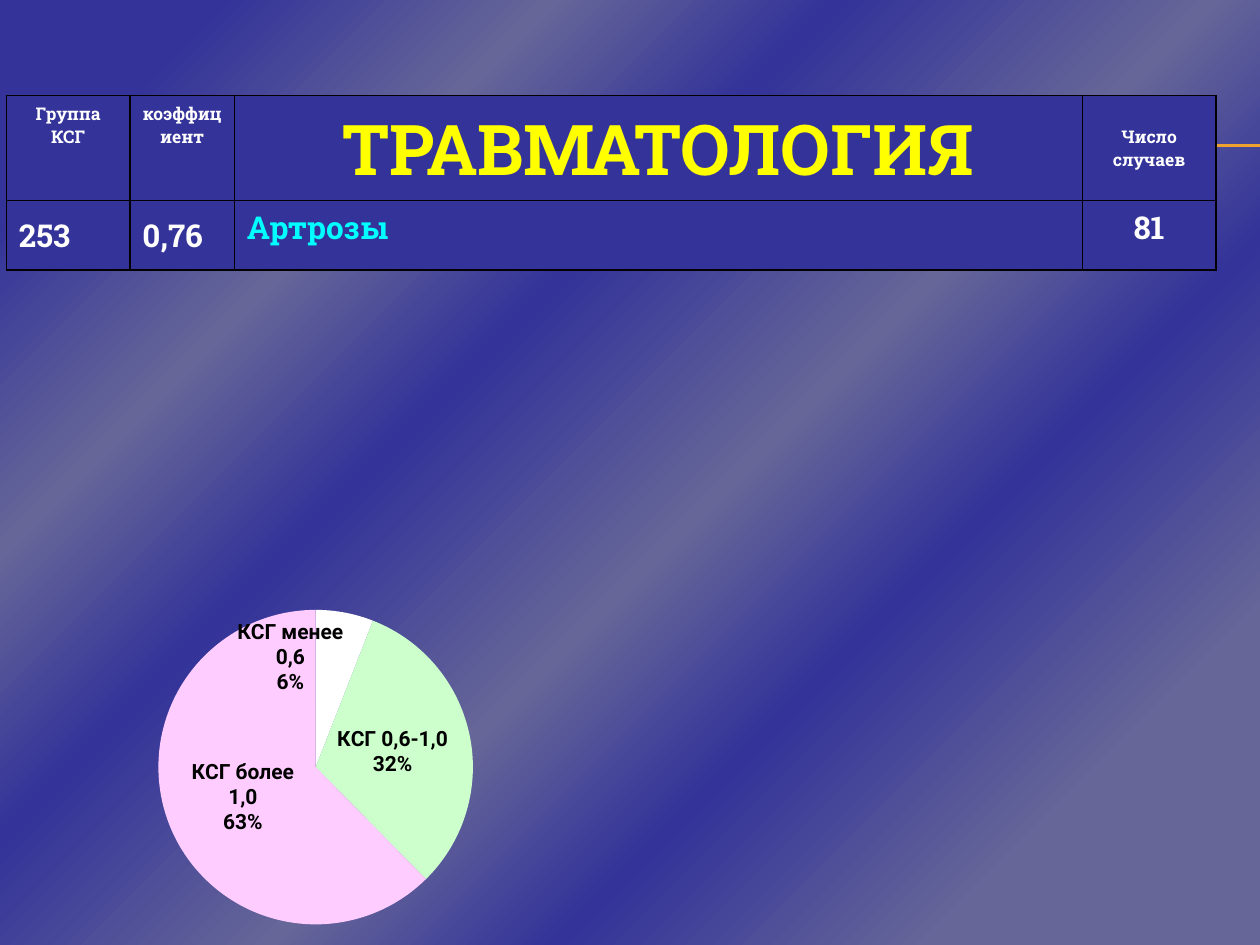
from dataclasses import dataclass

from lxml import etree
from pptx import Presentation
from pptx import util as u
from pptx.chart.data import CategoryChartData
from pptx.dml.color import RGBColor
from pptx.enum import chart as charts, shapes, text
from pptx.oxml import ns


@dataclass(frozen=True)
class Theme:
    navy: str = "333399"
    slate: str = "666699"
    orange: str = "F0A22E"
    white: str = "FFFFFF"
    yellow: str = "FFFF00"
    cyan: str = "00FFFF"
    black: str = "000000"
    mint: str = "CCFFCC"
    pink: str = "FFCCFF"
    table_font: str = "Roboto Slab"
    chart_font: str = "Roboto"
    header_size: int = 10
    title_size: int = 40
    body_size: int = 18
    label_size: int = 12


THEME = Theme()


@dataclass(frozen=True)
class CellText:
    lines: tuple
    size: int
    color: str = THEME.white
    centered: bool = True
    middle: bool = False


def rgb(color):
    return RGBColor.from_string(color)


def add_element(parent, tag, **attributes):
    return etree.SubElement(parent, ns.qn(tag), attributes)


def add_color(parent, color):
    add_element(parent, "a:srgbClr", val=color)


def style_font(font, name, size, color):
    font.name = name
    font.size = u.Pt(size)
    font.bold = True
    font.color.rgb = rgb(color)


def paint_background(page):
    page.background.fill.gradient()
    gradient = page.element.xpath(".//p:bg//a:gradFill")[0]
    for child in list(gradient):
        gradient.remove(child)
    stops = add_element(gradient, "a:gsLst")
    for index, percent in enumerate((10, 25, 38, 55, 68, 85)):
        stop = add_element(stops, "a:gs", pos=str(percent * 1000))
        add_color(stop, THEME.slate if index % 2 else THEME.navy)
    add_element(gradient, "a:lin", ang=str(45 * 60000), scaled="0")


def add_rule(page, top):
    rule = page.shapes.add_connector(
        shapes.MSO_CONNECTOR.STRAIGHT,
        u.Inches(0.56), u.Inches(top), u.Inches(10), u.Inches(top),
    )
    rule.line.color.rgb = rgb(THEME.orange)
    rule.line.width = u.Pt(0.75)
    add_element(rule.element.spPr, "a:effectLst")


def add_borders(cell):
    properties = cell._tc.get_or_add_tcPr()
    for side in ("L", "R", "T", "B"):
        border = add_element(properties, f"a:ln{side}", w=str(u.Pt(1)))
        add_color(add_element(border, "a:solidFill"), THEME.black)


def fill_cell(cell, content):
    add_borders(cell)
    cell.fill.solid()
    cell.fill.fore_color.rgb = rgb(THEME.navy)
    anchors = text.MSO_ANCHOR
    cell.vertical_anchor = anchors.MIDDLE if content.middle else anchors.TOP
    frame = cell.text_frame
    for index, line in enumerate(content.lines):
        para = frame.add_paragraph() if index else frame.paragraphs[0]
        para.alignment = text.PP_ALIGN.CENTER if content.centered else text.PP_ALIGN.LEFT
        span = para.add_run()
        span.text = line
        style_font(span.font, THEME.table_font, content.size, content.color)


def add_group_table(page):
    small, big = THEME.header_size, THEME.body_size
    rows = (
        (
            CellText(("Группа КСГ",), small),
            CellText(("коэффициент",), small),
            CellText(("ТРАВМАТОЛОГИЯ",), THEME.title_size, THEME.yellow),
            CellText(("Число", "случаев"), small, middle=True),
        ),
        (
            CellText(("253",), big, centered=False, middle=True),
            CellText(("0,76",), big, centered=False, middle=True),
            CellText(("Артрозы",), big, THEME.cyan, centered=False),
            CellText(("81",), big),
        ),
    )
    widths, heights = (0.98, 0.83, 6.73, 1.06), (0.83, 0.55)
    table = page.shapes.add_table(
        len(heights), len(widths), u.Inches(0.05), u.Inches(0.76),
        u.Inches(sum(widths)), u.Inches(sum(heights)),
    ).table
    table.first_row = False
    table.horz_banding = False
    for column, width in zip(table.columns, widths):
        column.width = u.Inches(width)
    for row, height, contents in zip(table.rows, heights, rows):
        row.height = u.Inches(height)
        for cell, content in zip(row.cells, contents):
            fill_cell(cell, content)


def place_plot(chart):
    area = chart.element.xpath(".//c:plotArea")[0]
    for old in area.findall(ns.qn("c:layout")):
        area.remove(old)
    layout = etree.Element(ns.qn("c:layout"))
    manual = add_element(layout, "c:manualLayout")
    for tag, value in (
        ("layoutTarget", "inner"), ("xMode", "edge"), ("yMode", "edge"),
        ("x", "0.07"), ("y", "0.175"), ("w", "0.837"), ("h", "0.808"),
    ):
        add_element(manual, f"c:{tag}", val=value)
    area.insert(0, layout)


def show_category_and_share(chart):
    for label in chart.element.xpath(".//c:dLbl"):
        number_format = etree.Element(
            ns.qn("c:numFmt"), {"formatCode": '0"%"', "sourceLinked": "0"}
        )
        label.find(ns.qn("c:idx")).addnext(number_format)
        label.find(ns.qn("c:showCatName")).set("val", "1")
        add_element(label, "c:separator").text = "\n"


def add_share_pie(page):
    positions = charts.XL_LABEL_POSITION
    slices = (
        ("КСГ менее 0,6", 6, THEME.white, positions.INSIDE_END),
        ("КСГ 0,6-1,0", 32, THEME.mint, positions.CENTER),
        ("КСГ более 1,0", 63, THEME.pink, positions.CENTER),
    )
    data = CategoryChartData()
    data.categories = [name for name, *_ in slices]
    data.add_series("Series 1", [value for _, value, *_ in slices])
    chart = page.shapes.add_chart(
        charts.XL_CHART_TYPE.PIE, u.Inches(0.2), u.Inches(4.3),
        u.Inches(4.72), u.Inches(3.09), data,
    ).chart
    chart.has_title = False
    chart.has_legend = False
    chart.font.name = THEME.chart_font
    chart.font.size = u.Pt(THEME.body_size)
    chart.font.color.rgb = rgb(THEME.black)
    chart.plots[0].vary_by_categories = True
    points = chart.plots[0].series[0].points
    for index, (_, _, color, position) in enumerate(slices):
        point = points[index]
        point.format.fill.solid()
        point.format.fill.fore_color.rgb = rgb(color)
        point.format.line.fill.background()
        style_font(point.data_label.font, THEME.chart_font, THEME.label_size, THEME.black)
        point.data_label.position = position
    show_category_and_share(chart)
    place_plot(chart)


def main():
    deck = Presentation()
    deck.slide_width, deck.slide_height = u.Inches(10), u.Inches(7.5)
    page = deck.slides.add_slide(deck.slide_layouts[6])
    paint_background(page)
    for top in (1.15, 1.16):
        add_rule(page, top)
    add_group_table(page)
    add_share_pie(page)
    deck.save("out.pptx")


if __name__ == "__main__":
    main()
